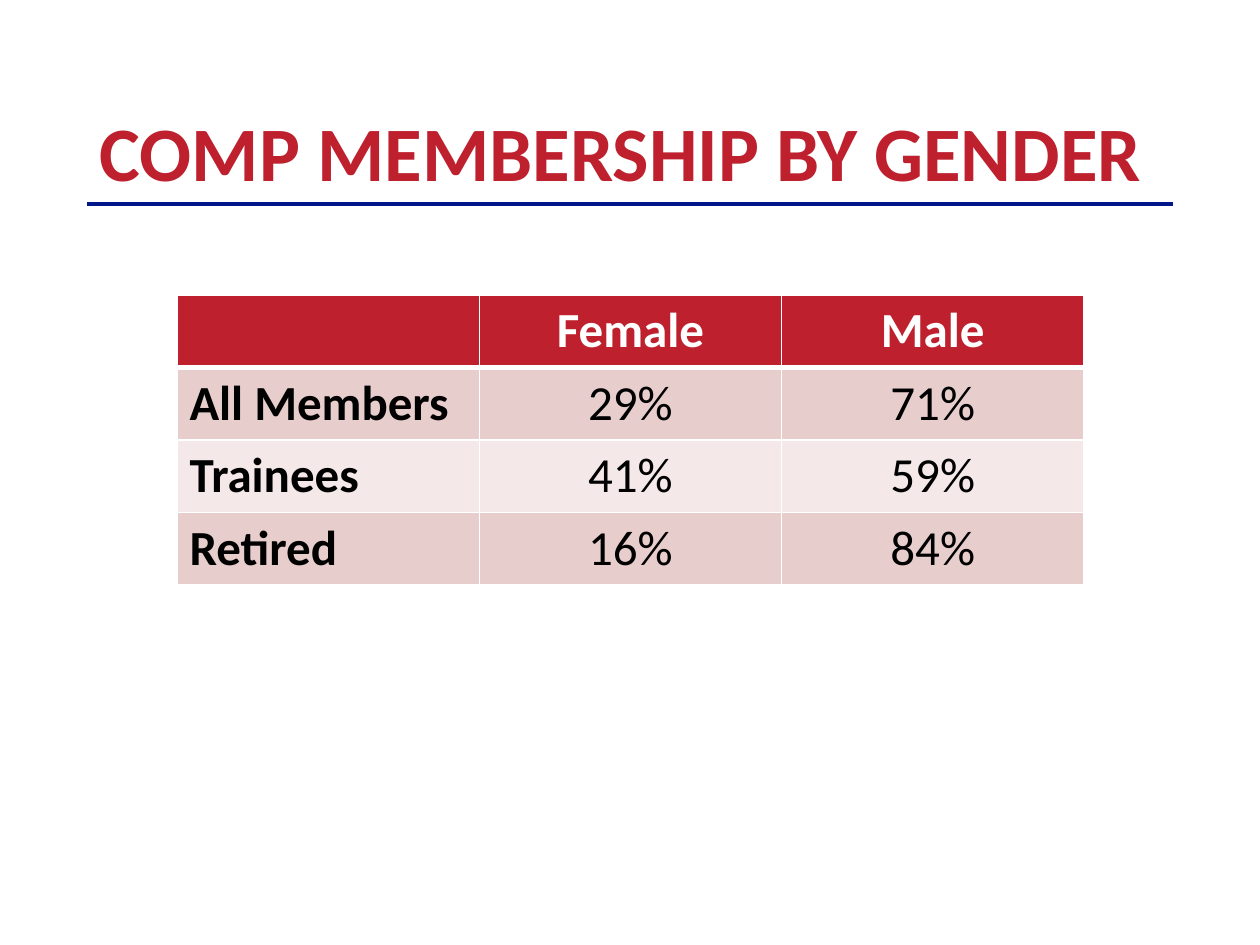
"""Build the slide on membership by gender."""
from lxml import etree
from pptx import Presentation
from pptx import util as u
from pptx.dml.color import RGBColor
from pptx.enum import shapes, text
from pptx.oxml.ns import qn

RED = RGBColor(0xBE, 0x20, 0x2E)
NAVY = RGBColor(0x00, 0x16, 0x89)
WHITE = RGBColor(0xFF, 0xFF, 0xFF)
BLACK = RGBColor(0x00, 0x00, 0x00)
BANDS = (RGBColor(0xE8, 0xCD, 0xCD), RGBColor(0xF4, 0xE8, 0xE8))

ROWS = [
    ("", "Female", "Male"),
    ("All Members", "29%", "71%"),
    ("Trainees", "41%", "59%"),
    ("Retired", "16%", "84%"),
]


def px(length):
    return round(length * u.Inches(1) / 126)


class Painter:
    def __init__(self, deck, font="Calibri"):
        self.font = font
        self.page = deck.slides.add_slide(deck.slide_layouts[5])

    def style(self, para, size, color, bold, align):
        para.alignment = align
        para.font.name = self.font
        para.font.size = u.Pt(size)
        para.font.bold = bold
        para.font.color.rgb = color

    def title(self, words, left, top, width, height):
        box = self.page.shapes.title
        box.left, box.top, box.width, box.height = map(px, (left, top, width, height))
        frame = box.text_frame
        frame.text = words
        frame.word_wrap = True
        frame.auto_size = text.MSO_AUTO_SIZE.NONE
        frame.vertical_anchor = text.MSO_ANCHOR.BOTTOM
        para = frame.paragraphs[0]
        para.line_spacing = 0.9
        self.style(para, 44, RED, True, text.PP_ALIGN.LEFT)

    def rule(self, left, right, y, color, weight):
        line = self.page.shapes.add_connector(
            shapes.MSO_CONNECTOR.STRAIGHT, px(left), px(y), px(right), px(y))
        line.line.color.rgb = color
        line.line.width = u.Pt(weight)
        etree.SubElement(line._element.spPr, qn("a:effectLst"))

    def border(self, cell, side, weight):
        properties = cell._tc.get_or_add_tcPr()
        edge = etree.SubElement(properties, qn(f"a:ln{side}"), w=str(u.Pt(weight)))
        fill = etree.SubElement(edge, qn("a:solidFill"))
        etree.SubElement(fill, qn("a:srgbClr"), val=str(WHITE))

    def table(self, rows, left, top, width, row_height):
        table = self.page.shapes.add_table(
            len(rows), len(rows[0]), px(left), px(top),
            px(width), px(row_height * len(rows))).table
        for r, row in enumerate(rows):
            for c, words in enumerate(row):
                self.cell(table.cell(r, c), words, r, c)

    def cell(self, cell, words, r, c):
        header = r == 0
        heavy = {0: "B", 1: "T"}.get(r)
        for side in "LRTB":
            self.border(cell, side, 3 if side == heavy else 1)
        cell.fill.solid()
        cell.fill.fore_color.rgb = RED if header else BANDS[(r - 1) % 2]
        cell.text = words
        self.style(cell.text_frame.paragraphs[0], 28, WHITE if header else BLACK,
                   header or c == 0,
                   text.PP_ALIGN.CENTER if c else text.PP_ALIGN.LEFT)


def main():
    deck = Presentation()
    deck.slide_width, deck.slide_height = px(1260), px(945)
    painter = Painter(deck)
    painter.rule(87, 1173, 204, NAVY, 2)
    painter.title("COMP MEMBERSHIP BY GENDER", 87, 50, 1086, 154)
    painter.table(ROWS, 177, 295, 907, 72)
    deck.save("out.pptx")


if __name__ == "__main__":
    main()
